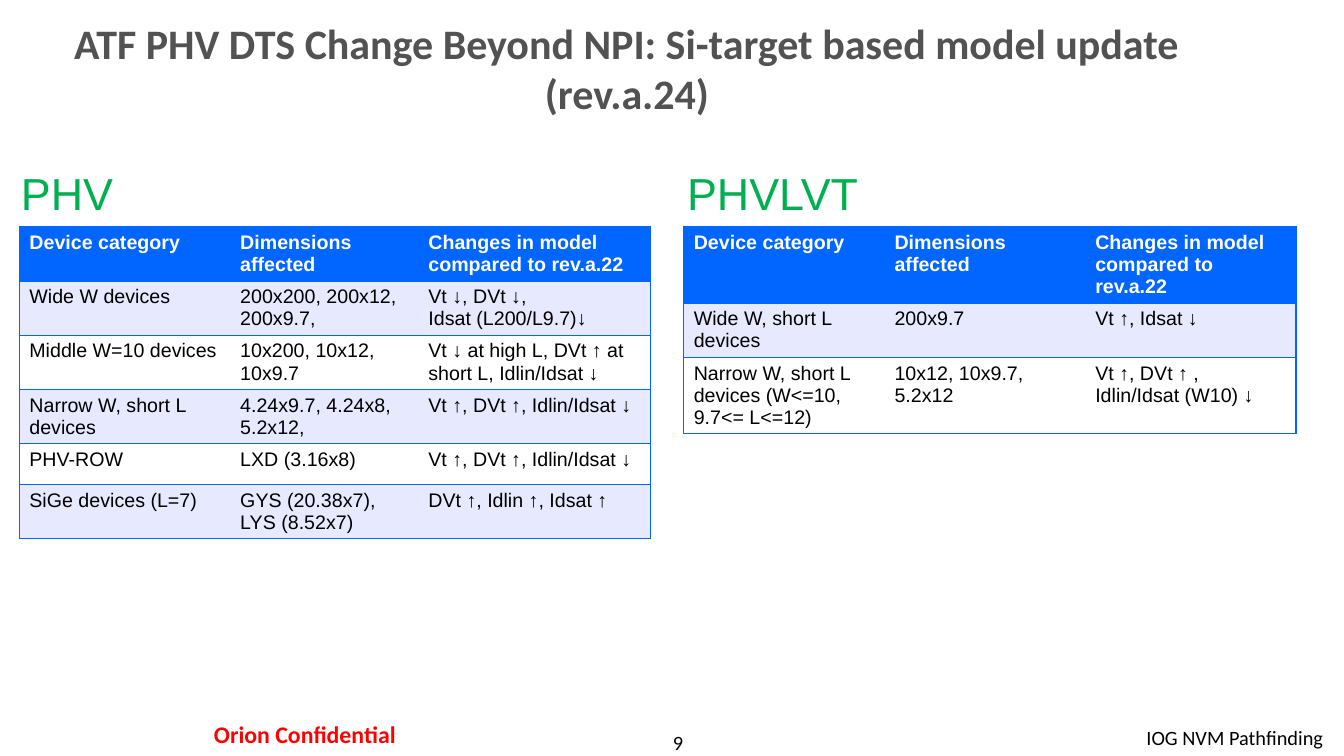
from dataclasses import dataclass

from lxml import etree
from pptx import Presentation
from pptx.dml.color import RGBColor
from pptx.enum.text import MSO_ANCHOR, MSO_AUTO_SIZE, PP_ALIGN
from pptx.oxml.ns import qn
from pptx.util import Emu, Inches, Pt

LEFT, CENTER, RIGHT = PP_ALIGN.LEFT, PP_ALIGN.CENTER, PP_ALIGN.RIGHT
TOP, MIDDLE = MSO_ANCHOR.TOP, MSO_ANCHOR.MIDDLE
NO_AUTOFIT = MSO_AUTO_SIZE.NONE

BLUE = RGBColor(0x00, 0x66, 0xFF)
LAVENDER = RGBColor(0xE7, 0xEA, 0xFF)
WHITE = RGBColor(0xFF, 0xFF, 0xFF)
BLACK = RGBColor(0x00, 0x00, 0x00)
GRAY = RGBColor(0x52, 0x52, 0x52)
GREEN = RGBColor(0x00, 0xB0, 0x50)
RED = RGBColor(0xFF, 0x00, 0x00)

WIDTH, HEIGHT = Inches(13.33), Inches(7.5)
COLUMNS, ROWS = 160, 90
TABLE_TOP, TABLE_ROW = 27, 4.9
HEADER = ("Device category", "Dimensions affected", "Changes in model compared to rev.a.22")


@dataclass(frozen=True)
class Box:
    x: float
    y: float
    w: float
    h: float

    def emu(self) -> tuple:
        return col(self.x), row(self.y), col(self.w), row(self.h)


@dataclass(frozen=True)
class Label:
    text: str
    box: Box
    size: float
    color: RGBColor
    font: str = "Calibri"
    bold: bool = False
    align: PP_ALIGN = CENTER
    inset: tuple = (0, 0)


@dataclass(frozen=True)
class DeviceTable:
    x: float
    widths: tuple
    rows: tuple


LABELS = (
    Label("9", Box(66.7, 86.9, 28, 2.9), 14.5, BLACK),
    Label("IOG NVM Pathfinding", Box(106, 85.8, 52.7, 4.2), 14.5, BLACK,
          align=RIGHT, inset=(0.1, 0.05)),
    Label("Orion Confidential", Box(18.6, 85, 35.4, 4.9), 17, RED,
          bold=True, inset=(0.12, 0.06)),
    Label("PHV", Box(2.5, 19.7, 21.2, 5.8), 32, GREEN, "Arial", align=LEFT),
    Label("PHVLVT", Box(81.8, 19.7, 71.8, 5.8), 32, GREEN, "Arial", align=LEFT),
)

TABLES = (
    DeviceTable(2.3, (25.1, 22.4, 27.6), (
        HEADER,
        ("Wide W devices", "200x200, 200x12, 200x9.7,", "Vt ↓, DVt ↓,\nIdsat (L200/L9.7)↓"),
        ("Middle W=10 devices", "10x200, 10x12, 10x9.7",
         "Vt ↓ at high L, DVt ↑ at short L, Idlin/Idsat ↓"),
        ("Narrow W, short L devices", "4.24x9.7, 4.24x8, 5.2x12,", "Vt ↑, DVt ↑, Idlin/Idsat ↓"),
        ("PHV-ROW", "LXD (3.16x8)", "Vt ↑, DVt ↑, Idlin/Idsat ↓"),
        ("SiGe devices (L=7)", "GYS (20.38x7),\nLYS (8.52x7)", "DVt ↑, Idlin ↑, Idsat ↑"),
    )),
    DeviceTable(81.4, (23.9, 23.9, 25.1), (
        HEADER,
        ("Wide W, short L devices", "200x9.7", "Vt ↑, Idsat ↓"),
        ("Narrow W, short L devices (W<=10,\n9.7<= L<=12)", "10x12, 10x9.7, 5.2x12",
         "Vt ↑, DVt ↑ , Idlin/Idsat (W10) ↓"),
    )),
)


def col(n: float) -> Emu:
    return Emu(round(WIDTH * n / COLUMNS))


def row(n: float) -> Emu:
    return Emu(round(HEIGHT * n / ROWS))


def write(tf, text: str, *, size: float, color: RGBColor, font: str = "Arial",
          bold: bool = False, align: PP_ALIGN = LEFT) -> None:
    for i, line in enumerate(text.split("\n")):
        p = tf.add_paragraph() if i else tf.paragraphs[0]
        p.alignment = align
        r = p.add_run()
        r.text = line
        r.font.size, r.font.name, r.font.bold = Pt(size), font, bold
        r.font.color.rgb = color


def set_frame(tf, inset: tuple, anchor: MSO_ANCHOR) -> None:
    tf.word_wrap = True
    tf.auto_size = NO_AUTOFIT
    tf.vertical_anchor = anchor
    tf.margin_left = tf.margin_right = Inches(inset[0])
    tf.margin_top = tf.margin_bottom = Inches(inset[1])


def add_title(s, text: str, box: Box) -> None:
    sp = s.shapes.title
    sp.left, sp.top, sp.width, sp.height = box.emu()
    set_frame(sp.text_frame, (0, 0), MIDDLE)
    write(sp.text_frame, text, size=30, color=GRAY, font="Calibri", bold=True, align=CENTER)


def add_label(s, label: Label) -> None:
    tf = s.shapes.add_textbox(*label.box.emu()).text_frame
    set_frame(tf, label.inset, TOP)
    write(tf, label.text, size=label.size, color=label.color, font=label.font,
          bold=label.bold, align=label.align)


def set_borders(cell, first: bool, last: bool) -> None:
    tc_pr = cell._tc.get_or_add_tcPr()
    for side, visible in (("L", first), ("R", last), ("T", True), ("B", True)):
        ln = etree.SubElement(tc_pr, qn(f"a:ln{side}"), w=str(Pt(1)))
        if visible:
            fill = etree.SubElement(ln, qn("a:solidFill"))
            etree.SubElement(fill, qn("a:srgbClr"), val=str(BLUE))
        else:
            etree.SubElement(ln, qn("a:noFill"))


def add_device_table(s, spec: DeviceTable) -> None:
    box = Box(spec.x, TABLE_TOP, sum(spec.widths), TABLE_ROW * len(spec.rows))
    table = s.shapes.add_table(len(spec.rows), len(spec.widths), *box.emu()).table
    table.horz_banding = False
    for column, width in zip(table.columns, spec.widths):
        column.width = col(width)
    for i, texts in enumerate(spec.rows):
        table.rows[i].height = row(TABLE_ROW)
        header = i == 0
        shade = BLUE if header else LAVENDER if i % 2 else WHITE
        for j, text in enumerate(texts):
            cell = table.cell(i, j)
            set_borders(cell, j == 0, j == len(texts) - 1)
            cell.fill.solid()
            cell.fill.fore_color.rgb = shade
            write(cell.text_frame, text, size=14, color=WHITE if header else BLACK, bold=header)


def main() -> None:
    prs = Presentation()
    prs.slide_width, prs.slide_height = WIDTH, HEIGHT
    s = prs.slides.add_slide(prs.slide_layouts[5])
    add_title(s, "ATF PHV DTS Change Beyond NPI: Si-target based model update (rev.a.24)",
              Box(2.4, 1.8, 144.5, 12.5))
    for label in LABELS:
        add_label(s, label)
    for spec in TABLES:
        add_device_table(s, spec)
    prs.save("out.pptx")


if __name__ == "__main__":
    main()
